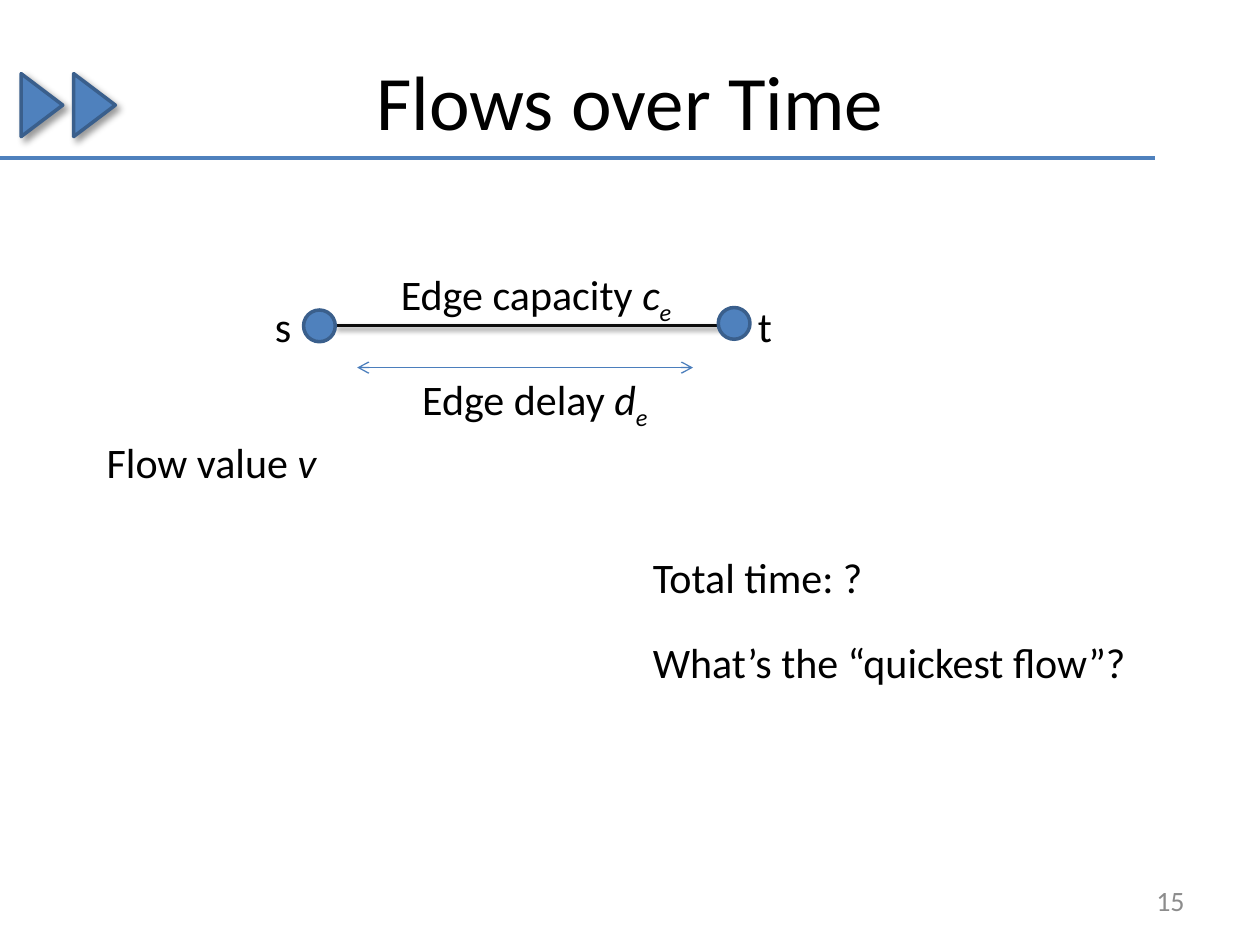
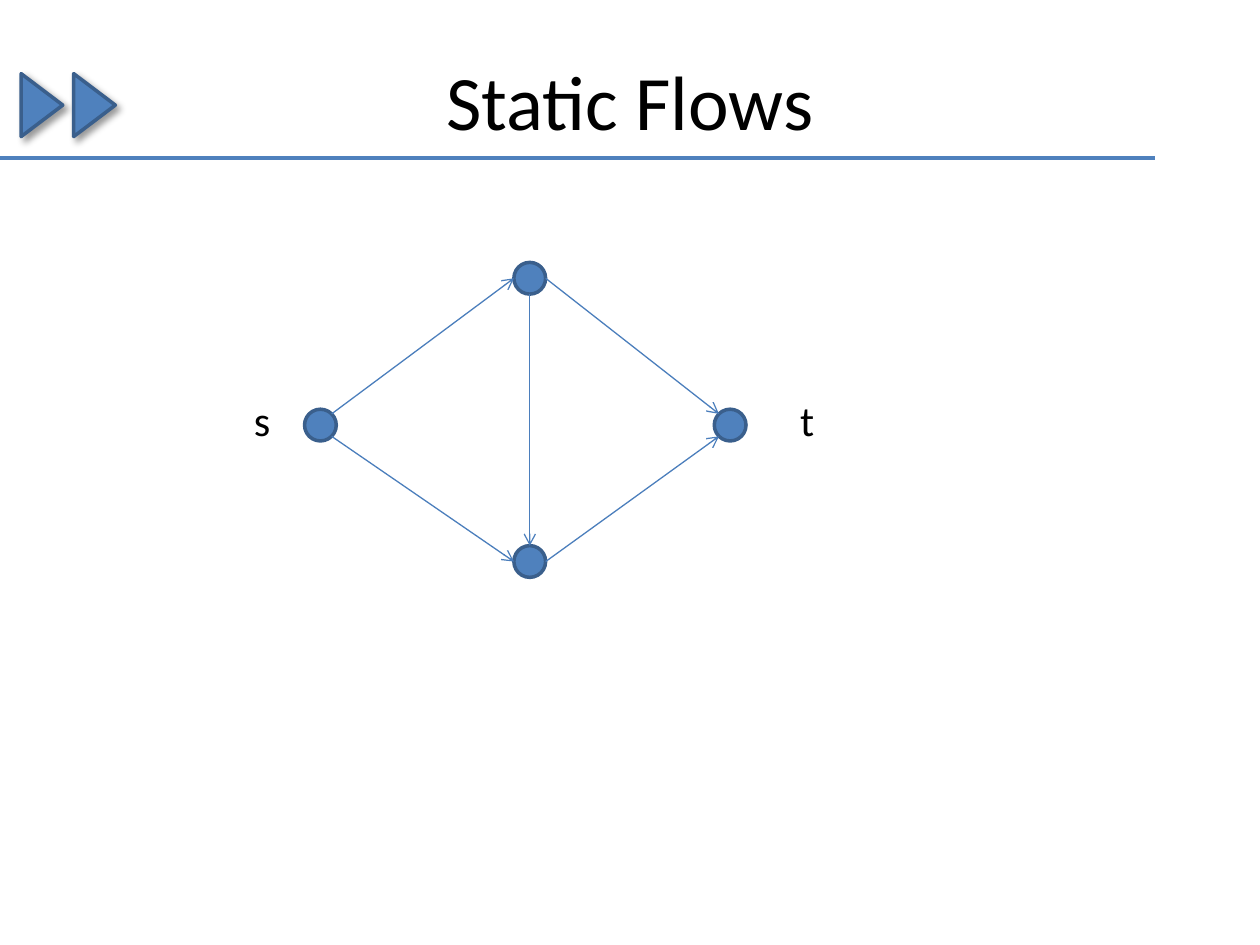
from dataclasses import dataclass
from typing import NamedTuple

from lxml.etree import SubElement
from pptx import Presentation
from pptx.dml.color import RGBColor
from pptx.enum.shapes import MSO_CONNECTOR, MSO_SHAPE
from pptx.enum.text import MSO_ANCHOR, MSO_AUTO_SIZE, PP_ALIGN
from pptx.oxml.ns import qn
from pptx.util import Cm, Pt

COLORS = {
    "blue": "4F81BD",
    "rim": "3A5F8C",
    "arrow": "4B7EBC",
    "edge": "0D0D0D",
    "text": "000000",
    "number": "8C8C8C",
}
FONT = "Calibri"
RADIUS = 0.32
SLANT = 0.71  # share of the radius at 45 degrees


class Point(NamedTuple):
    x: float
    y: float


class Span(NamedTuple):
    """A run of text with its style."""
    text: str
    italic: bool = False
    sub: bool = False


class Shade(NamedTuple):
    """Shadow: opacity in percent, blur and distance in points, angle."""
    alpha: int
    blur: float
    dist: float
    angle: int


@dataclass
class Label:
    spans: list[Span]
    left: float
    top: float
    width: float
    height: float = 1.27
    size: int = 24
    color: str = "text"
    align: PP_ALIGN = PP_ALIGN.LEFT
    fixed: bool = False


@dataclass
class Line:
    start: Point
    end: Point
    color: str = "arrow"
    width: float = 0.75
    head: bool = False
    tail: bool = False
    shade: Shade | None = None


BADGE = Shade(40, 4, 3, 45)
UNDER = Shade(38, 3.1, 1.6, 90)


def paint(name: str) -> RGBColor:
    return RGBColor.from_string(COLORS[name])


def cast(shape, shade: Shade | None) -> None:
    """Replace the theme shadow by the given one, or by none."""
    effects = SubElement(shape.element.spPr, qn("a:effectLst"))
    if shade is None:
        return
    outer = SubElement(effects, qn("a:outerShdw"), {
        "blurRad": str(Pt(shade.blur)), "dist": str(Pt(shade.dist)),
        "dir": str(shade.angle * 60000), "algn": "tl", "rotWithShape": "0"})
    tint = SubElement(outer, qn("a:srgbClr"), val="000000")
    SubElement(tint, qn("a:alpha"), val=str(shade.alpha * 1000))


def add_solid(slide, kind: MSO_SHAPE, left: float, top: float, width: float,
              height: float, turn: int = 0, shade: Shade | None = None) -> None:
    shape = slide.shapes.add_shape(kind, Cm(left), Cm(top), Cm(width), Cm(height))
    shape.rotation = turn
    shape.fill.solid()
    shape.fill.fore_color.rgb = paint("blue")
    shape.line.color.rgb = paint("rim")
    shape.line.width = Pt(2)
    cast(shape, shade)


def add_node(slide, mid: Point) -> None:
    add_solid(slide, MSO_SHAPE.OVAL, mid.x - RADIUS, mid.y - RADIUS,
              2 * RADIUS, 2 * RADIUS)


def add_line(slide, line: Line) -> None:
    wire = slide.shapes.add_connector(
        MSO_CONNECTOR.STRAIGHT, *map(Cm, line.start + line.end))
    wire.line.color.rgb = paint(line.color)
    wire.line.width = Pt(line.width)
    stroke = wire.element.spPr.find(qn("a:ln"))
    for tag, used in (("a:headEnd", line.head), ("a:tailEnd", line.tail)):
        if used:
            SubElement(stroke, qn(tag), type="arrow")
    cast(wire, line.shade)


def add_label(slide, label: Label) -> None:
    box = slide.shapes.add_textbox(
        Cm(label.left), Cm(label.top), Cm(label.width), Cm(label.height))
    frame = box.text_frame
    frame.word_wrap = label.fixed
    if label.fixed:
        frame.vertical_anchor = MSO_ANCHOR.MIDDLE
    else:
        frame.auto_size = MSO_AUTO_SIZE.SHAPE_TO_FIT_TEXT
    para = frame.paragraphs[0]
    para.alignment = label.align
    para.font.name = FONT
    para.font.size = Pt(label.size)
    para.font.color.rgb = paint(label.color)
    for span in label.spans:
        run = para.add_run()
        run.text = span.text
        if span.italic:
            run.font.italic = True
        if span.sub:
            run.font._element.set("baseline", "-25000")


def add_page(deck, title: str):
    """Add a slide with the play badge, the rule and the title."""
    slide = deck.slides.add_slide(deck.slide_layouts[6])
    for left in (0.21, 1.27):
        add_solid(slide, MSO_SHAPE.ISOSCELES_TRIANGLE, left, 1.7, 1.27, 0.84,
                  turn=90, shade=BADGE)
    add_line(slide, Line(Point(0, 3.18), Point(23.29, 3.18), "blue", 2.25))
    add_label(slide, Label([Span(title)], 1.27, 0.43, 22.86, 3.18, size=44,
                           align=PP_ALIGN.CENTER, fixed=True))
    return slide


def draw_timed(deck) -> None:
    slide = add_page(deck, "Flows over Time")
    add_line(slide, Line(Point(6.78, 6.56), Point(14.61, 6.56), "edge", 2,
                         shade=UNDER))
    add_line(slide, Line(Point(7.2, 7.41), Point(13.97, 7.41),
                         head=True, tail=True))
    for mid in (Point(6.44, 6.57), Point(14.8, 6.52)):
        add_node(slide, mid)
    index = Span("e", italic=True, sub=True)
    labels = [
        Label([Span("Edge delay "), Span("d", italic=True), index], 8.26, 7.41, 5.13),
        Label([Span("Edge capacity "), Span("c", italic=True), index], 7.83, 5.29, 6.05),
        Label([Span("s")], 5.29, 5.93, 0.84),
        Label([Span("t")], 15.03, 5.93, 0.79),
        Label([Span("Flow value "), Span("v", italic=True)], 1.9, 8.68, 4.78),
        Label([Span("Total time: ?")], 12.91, 11, 4.78),
        Label([Span("What’s the “quickest flow”?")], 12.91, 12.7, 10.13),
        Label([Span("15")], 18.2, 17.65, 5.93, 1.01, size=16, color="number",
              align=PP_ALIGN.RIGHT, fixed=True),
    ]
    for label in labels:
        add_label(slide, label)


def rim(mid: Point, right: float, down: float) -> Point:
    """Point on a node's rim, in the given direction."""
    return Point(mid.x + right * RADIUS, mid.y + down * RADIUS)


def draw_static(deck) -> None:
    slide = add_page(deck, "Static Flows")
    source, sink = Point(6.46, 8.57), Point(14.72, 8.57)
    upper, lower = Point(10.68, 5.61), Point(10.68, 11.32)
    for mid in (source, sink, upper, lower):
        add_node(slide, mid)
    for text, left, width in (("s", 4.87, 0.84), ("t", 15.88, 0.79)):
        add_label(slide, Label([Span(text)], left, 7.83, width))
    edges = [(rim(upper, 0, 1), rim(lower, 0, -1))]
    for mid, slant in ((upper, -SLANT), (lower, SLANT)):
        edges.append((rim(source, SLANT, slant), rim(mid, -1, 0)))
        edges.append((rim(mid, 1, 0), rim(sink, -SLANT, slant)))
    for start, end in edges:
        add_line(slide, Line(start, end, tail=True))


def main() -> None:
    deck = Presentation()
    deck.slide_width, deck.slide_height = Cm(25.4), Cm(19.05)
    draw_timed(deck)
    draw_static(deck)
    deck.save("out.pptx")


if __name__ == "__main__":
    main()
